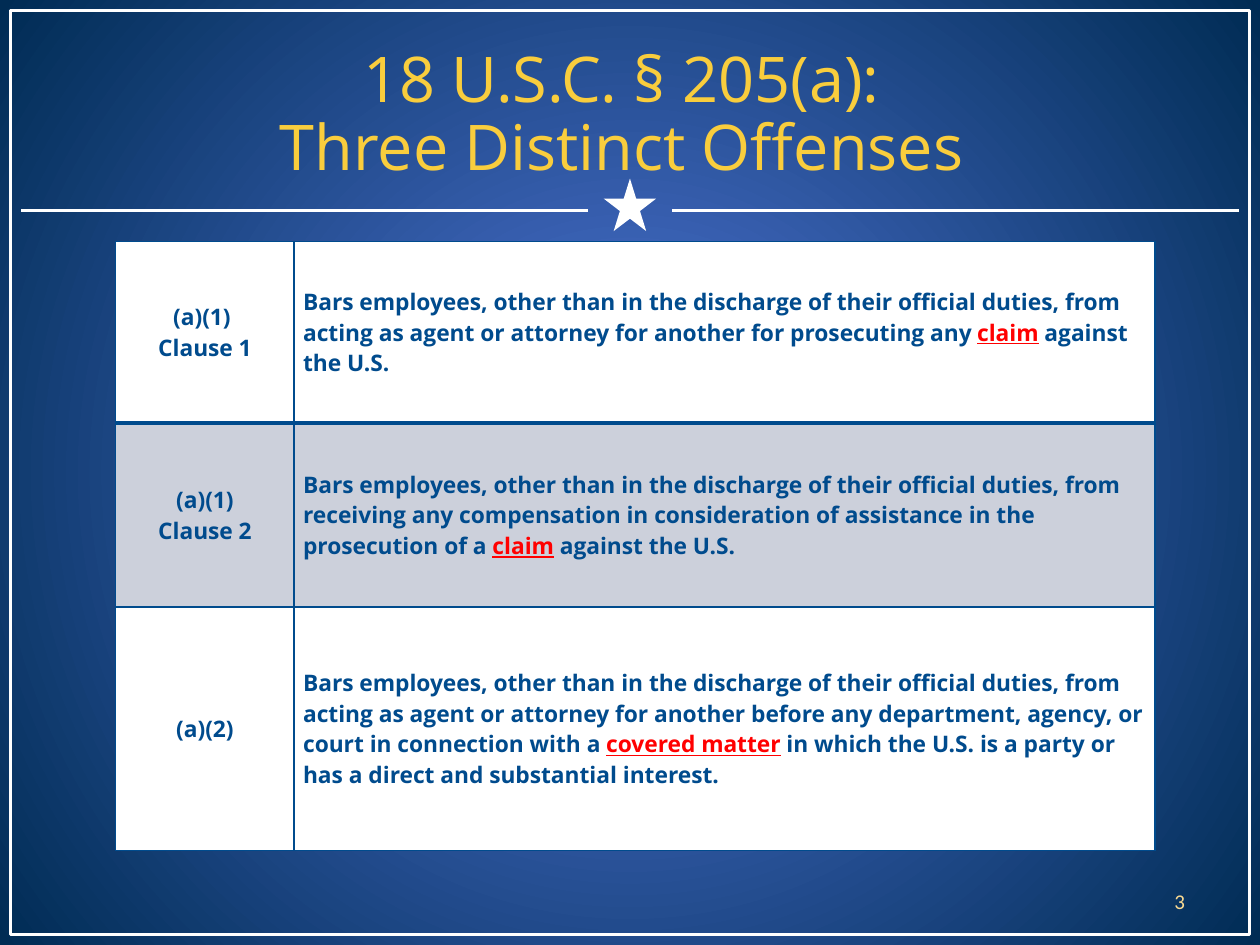
from dataclasses import dataclass

from lxml import etree
from pptx import Presentation
from pptx.dml.color import RGBColor
from pptx.enum.shapes import MSO_CONNECTOR, MSO_SHAPE
from pptx.enum.text import MSO_ANCHOR, PP_ALIGN
from pptx.oxml.ns import qn
from pptx.util import Cm, Pt

LEFT, CENTER, RIGHT = PP_ALIGN.LEFT, PP_ALIGN.CENTER, PP_ALIGN.RIGHT
MIDDLE = MSO_ANCHOR.MIDDLE
STRAIGHT = MSO_CONNECTOR.STRAIGHT
RECT, STAR = MSO_SHAPE.RECTANGLE, MSO_SHAPE.STAR_5_POINT


@dataclass(frozen=True)
class Theme:
    glow: str = "5176DA"
    edge: str = "002C54"
    white: str = "FFFFFF"
    band: str = "CCD0DB"
    navy: str = "004B8D"
    red: str = "FF0000"
    gold: str = "F9CD3D"
    pale_gold: str = "FBDB92"
    font: str = "Open Sans"
    number_font: str = "Calibri"
    title_size: int = 36
    cell_size: int = 13
    number_size: int = 12
    rule: float = 2
    border: float = 1
    heavy_border: float = 3


class Deck:
    def __init__(self, prs, theme):
        self.theme = theme
        self.slide = prs.slides.add_slide(prs.slide_layouts[6])

    def background(self):
        fill = self.slide.background.fill
        fill.gradient()
        for stop, color, pos in zip(fill.gradient_stops, (self.theme.glow, self.theme.edge), (0, 1)):
            stop.color.rgb = RGBColor.from_string(color)
            stop.position = pos
        grad = self.slide.background._cSld.find(".//" + qn("a:gradFill"))
        grad.remove(grad.find(qn("a:lin")))
        circle = etree.SubElement(grad, qn("a:path"), path="circle")
        etree.SubElement(circle, qn("a:fillToRect"), dict.fromkeys("ltrb", "50000"))

    def line(self, x1, x2, y):
        s = self.slide.shapes.add_connector(STRAIGHT, Cm(x1), Cm(y), Cm(x2), Cm(y))
        s.line.color.rgb = RGBColor.from_string(self.theme.white)
        s.line.width = Pt(self.theme.rule)
        etree.SubElement(s._element.spPr, qn("a:effectLst"))

    def shape(self, kind, x, y, w, h, fill=None, line=None):
        s = self.slide.shapes.add_shape(kind, Cm(x), Cm(y), Cm(w), Cm(h))
        s.shadow.inherit = False
        if fill:
            s.fill.solid()
            s.fill.fore_color.rgb = RGBColor.from_string(fill)
        else:
            s.fill.background()
        if line:
            s.line.color.rgb = RGBColor.from_string(line)
            s.line.width = Pt(self.theme.rule)
        else:
            s.line.fill.background()

    def run(self, p, text, color, **fmt):
        r = p.add_run()
        r.text = text
        r.font.color.rgb = RGBColor.from_string(color)
        for name, value in fmt.items():
            setattr(r.font, name, value)

    def text(self, x, y, w, h, lines, color, align, spacing=1.0, **fmt):
        tf = self.slide.shapes.add_textbox(Cm(x), Cm(y), Cm(w), Cm(h)).text_frame
        tf.word_wrap = True
        tf.vertical_anchor = MIDDLE
        p = tf.paragraphs[0]
        p.alignment = align
        p.line_spacing = spacing
        for i, line in enumerate(lines):
            if i:
                p.add_line_break()
            self.run(p, line, color, **fmt)

    def borders(self, cell, widths):
        tc_pr = cell._tc.get_or_add_tcPr()
        for i, (side, width) in enumerate(widths.items()):
            ln = etree.Element(qn("a:ln" + side), w=str(Pt(width)))
            fill = etree.SubElement(ln, qn("a:solidFill"))
            etree.SubElement(fill, qn("a:srgbClr"), val=self.theme.navy)
            tc_pr.insert(i, ln)

    def cell(self, cell, paragraphs, align, fill, widths):
        t = self.theme
        layout = {"margin_left": Cm(0.18), "margin_right": Cm(0.18),
                  "margin_top": 0, "margin_bottom": 0, "vertical_anchor": MIDDLE}
        for name, value in layout.items():
            setattr(cell, name, value)
        cell.fill.solid()
        cell.fill.fore_color.rgb = RGBColor.from_string(fill)
        self.borders(cell, widths)
        tf = cell.text_frame
        for i, parts in enumerate(paragraphs):
            p = tf.add_paragraph() if i else tf.paragraphs[0]
            p.alignment = align
            for j, part in enumerate(parts):
                key = j == 1
                self.run(p, part, t.red if key else t.navy, name=t.font,
                         size=Pt(t.cell_size), bold=True, underline=key)

    def table(self, x, y, cols, heights, rows):
        t = self.theme
        table = self.slide.shapes.add_table(
            len(rows), len(cols), Cm(x), Cm(y), Cm(sum(cols)), Cm(sum(heights))).table
        table.first_row = table.horz_banding = False
        for col, width in zip(table.columns, cols):
            col.width = Cm(width)
        for i, (labels, sentence) in enumerate(rows):
            table.rows[i].height = Cm(heights[i])
            fill = t.band if i % 2 else t.white
            widths = dict.fromkeys("LRTB", t.border)
            if i < 2:
                widths["TB"[1 - i]] = t.heavy_border
            self.cell(table.cell(i, 0), [[label] for label in labels], CENTER, fill, widths)
            self.cell(table.cell(i, 1), [sentence], LEFT, fill, widths)


DUTIES = "Bars employees, other than in the discharge of their official duties, from "
OFFENSES = [
    (["(a)(1) ", "Clause 1"],
     [DUTIES + "acting as agent or attorney for another for prosecuting any ",
      "claim", " against the U.S."]),
    (["(a)(1)", "Clause 2"],
     [DUTIES + "receiving any compensation in consideration of assistance "
      "in the prosecution of a ", "claim", " against the U.S."]),
    (["(a)(2)"],
     [DUTIES + "acting as agent or attorney for another before any department, "
      "agency, or court in connection with a ", "covered matter",
      " in which the U.S. is a party or has a direct and substantial interest."]),
]


def main():
    prs = Presentation()
    prs.slide_width, prs.slide_height = Cm(25.4), Cm(19.05)
    t = Theme()
    deck = Deck(prs, t)
    deck.background()
    for x in (0.43, 13.55):
        deck.line(x, x + 11.42, 4.24)
    deck.shape(STAR, 12.17, 3.6, 1.06, 1.06, fill=t.white)
    deck.shape(RECT, 0.21, 0.21, 24.98, 18.63, line=t.white)
    deck.text(1.27, 0.76, 22.86, 3.18, ["18 U.S.C. § 205(a): ", "Three Distinct Offenses "],
              t.gold, CENTER, spacing=0.9, name=t.font, size=Pt(t.title_size))
    deck.text(18.21, 17.65, 5.93, 1.02, ["3"], t.pale_gold, RIGHT,
              name=t.number_font, size=Pt(t.number_size))
    deck.table(2.33, 4.87, [3.6, 17.35], [3.66, 3.71, 4.9], OFFENSES)
    prs.save("out.pptx")


if __name__ == "__main__":
    main()
